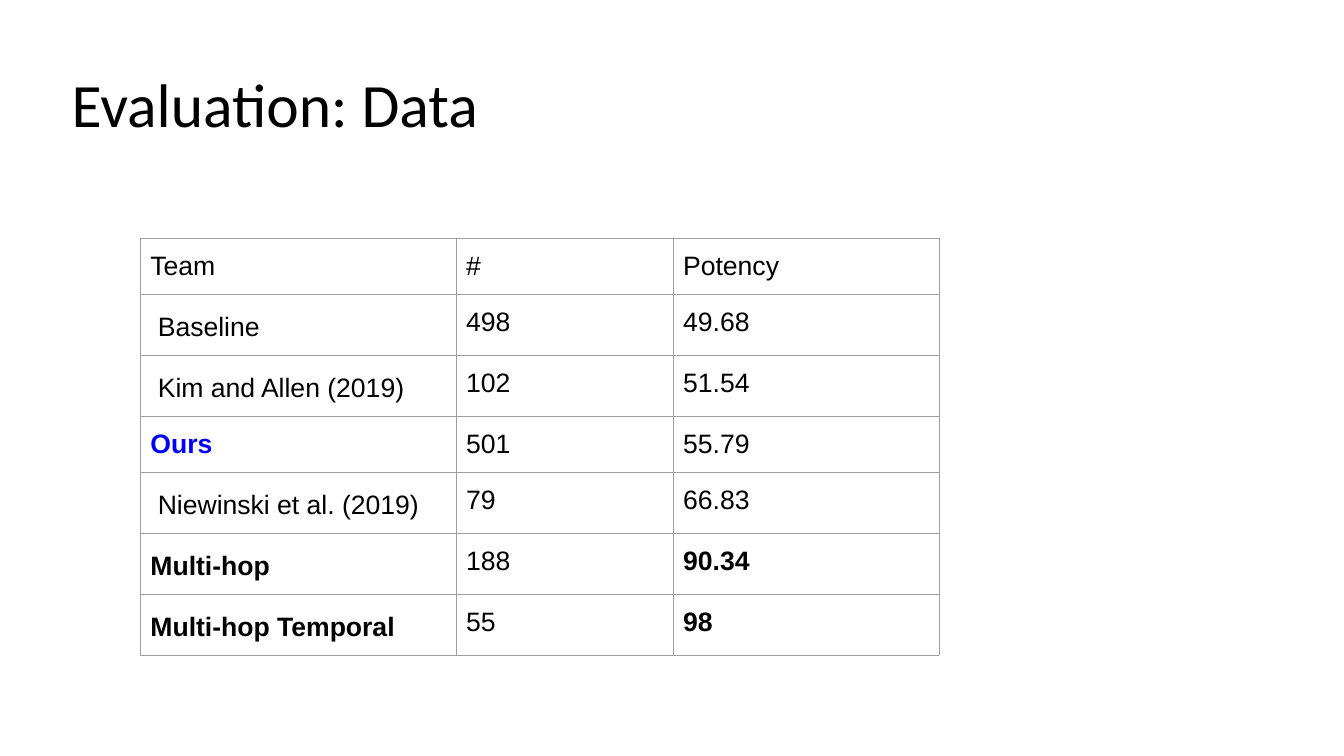
from lxml.etree import SubElement
from pptx import Presentation
from pptx.dml.color import RGBColor
from pptx.enum.text import MSO_ANCHOR as Anchor, PP_ALIGN as Align
from pptx.oxml.ns import qn
from pptx.util import Pt

BLACK, BLUE, GREY = "000000", "0000FF", "9E9E9E"


def write(frame, text, size=19, font="Arial", color=BLACK, bold=False, spacing=1.0):
    para = frame.paragraphs[0]
    para.alignment = Align.LEFT
    para.line_spacing = spacing
    span = para.add_run()
    span.text = text
    span.font.size = Pt(size)
    span.font.name = font
    span.font.bold = bold
    span.font.color.rgb = RGBColor.from_string(color)


def add_borders(cell, color, width):
    properties = cell._tc.get_or_add_tcPr()
    for side in ("a:lnL", "a:lnR", "a:lnT", "a:lnB"):
        line = SubElement(properties, qn(side), w=str(Pt(width)))
        fill = SubElement(line, qn("a:solidFill"))
        SubElement(fill, qn("a:srgbClr"), val=color)


deck = Presentation()
deck.slide_width, deck.slide_height = Pt(960), Pt(540)
page = deck.slides.add_slide(deck.slide_layouts[5])

# Title
title = page.shapes.title
title.left, title.top, title.width, title.height = Pt(44), Pt(47), Pt(1193), Pt(60)
frame = title.text_frame
frame.word_wrap = True
frame.vertical_anchor = Anchor.MIDDLE
frame.margin_left = frame.margin_right = Pt(7.2)
frame.margin_top = frame.margin_bottom = Pt(3.6)
write(frame, "Evaluation: Data", size=44, font="Calibri", spacing=0.9)

# Table content: text and format of the team, its count, text and format of its potency
loose, strong = {"spacing": 1.15}, {"bold": True}
results = [
    ("Team", {}, "#", "Potency", {}),
    (" Baseline", loose, "498", "49.68", {}),
    (" Kim and Allen (2019)", loose, "102", "51.54", {}),
    ("Ours", {"bold": True, "color": BLUE}, "501", "55.79", {}),
    (" Niewinski et al. (2019)", loose, "79", "66.83", {}),
    ("Multi-hop", loose | strong, "188", "90.34", strong),
    ("Multi-hop Temporal", loose | strong, "55", "98", strong),
]
column_widths = [225.5, 155, 190]
row_height = 40

# Table
table = page.shapes.add_table(
    len(results), len(column_widths), Pt(100.3), Pt(170),
    Pt(sum(column_widths)), Pt(row_height * len(results))).table
table.first_row = table.horz_banding = False
for column, width in zip(table.columns, column_widths):
    column.width = Pt(width)

for row, (team, team_format, count, potency, potency_format) in zip(table.rows, results):
    row.height = Pt(row_height)
    contents = [(team, team_format), (count, {}), (potency, potency_format)]
    for cell, (text, text_format) in zip(row.cells, contents):
        cell.margin_left = cell.margin_right = Pt(7.2)
        cell.margin_top = cell.margin_bottom = Pt(9.6)
        cell.vertical_anchor = Anchor.TOP
        add_borders(cell, GREY, 0.75)
        cell.fill.background()
        write(cell.text_frame, text, **text_format)

deck.save("out.pptx")
